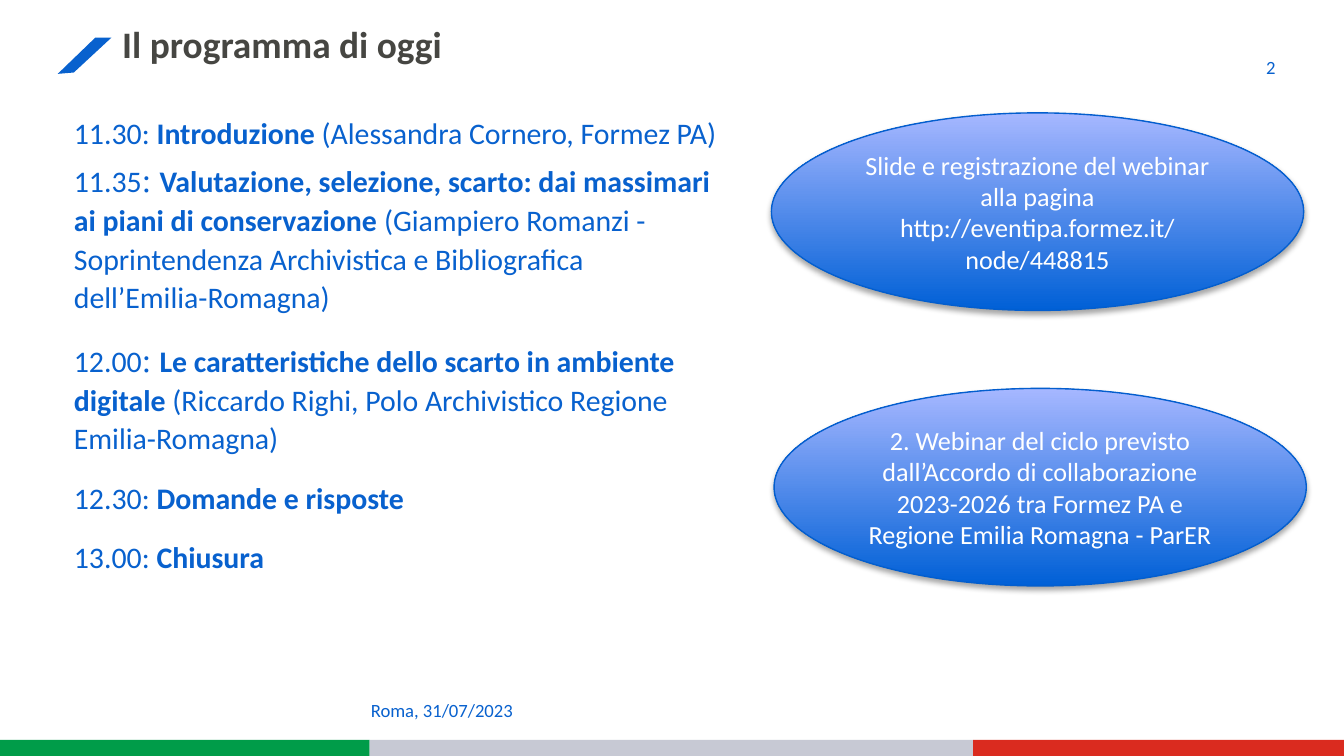
from lxml.etree import SubElement as Sub
from pptx import Presentation
from pptx.dml.color import RGBColor as RGB
from pptx.enum.shapes import MSO_SHAPE as Shape
from pptx.enum.text import MSO_ANCHOR as Anchor, PP_ALIGN as Align
from pptx.oxml.ns import qn
from pptx.util import Inches as In, Pt

# Content: each agenda item is time, separator, subject, speaker
TITLE = "Il programma di oggi"
PLACE = "Roma, 31/07/2023"
PAGE = "2"
AGENDA = [
    ("11.30", ": ", "Introduzione", " (Alessandra Cornero, Formez PA)"),
    ("11.35", ": ",
     "Valutazione, selezione, scarto: dai massimari ai piani di conservazione ",
     "(Giampiero Romanzi - Soprintendenza Archivistica e Bibliografica "
     "dell’Emilia-Romagna)"),
    ("12.00", ": ", "Le caratteristiche dello scarto in ambiente digitale ",
     "(Riccardo Righi, Polo Archivistico Regione Emilia-Romagna)"),
    ("12.30", ": ", "Domande e risposte", ""),
    ("13.00", ": ", "Chiusura", ""),
]
SERIF = {"11.35", "12.00"}  # times followed by a large serif colon
NOTES = [
    (5.74, 0.84, ["Slide e registrazione del webinar alla pagina",
                  "http://eventipa.formez.it/node/448815"]),
    (5.76, 2.89, ["2. Webinar del ciclo previsto dall’Accordo di collaborazione "
                  "2023-2026 tra Formez PA e Regione Emilia Romagna - ParER"]),
]

# Theme
THEME = {
    "blue": "0861CE", "dark": "464642", "white": "FFFFFF", "edge": "035ECE",
    "deep": "0060D6", "pale": "A6B7FF", "shade": "000000",
    "font": "Calibri", "serif": "Times New Roman",
    "title": 20, "body": 16, "colon": 18, "note": 14, "small": 10,
}
FLAG = [("009C49", 2.75), ("C7C9D4", 4.49), ("DA2B1F", 2.76)]
W = 10
H = W * 9 / 16
BAR = 0.12
NOTE_W, NOTE_H = 3.96, 1.47
SLASH = [(0.71, 0.28), (0.83, 0.28), (0.55, 0.54), (0.43, 0.55)]


def tint(name):
    return RGB.from_string(THEME.get(name, name))


def paint(shape, color):
    shape.shadow.inherit = False
    shape.fill.solid()
    shape.fill.fore_color.rgb = tint(color)
    shape.line.fill.background()


def write(par, text, size, color="blue", font="font", bold=False):
    run = par.add_run()
    run.text = text
    look = {"name": THEME[font], "size": Pt(THEME[size]), "bold": bold}
    for key, value in look.items():
        setattr(run.font, key, value)
    run.font.color.rgb = tint(color)


def add_box(slide, area, anchor=Anchor.TOP):
    frame = slide.shapes.add_textbox(*map(In, area)).text_frame
    look = {"word_wrap": True, "vertical_anchor": anchor, "margin_left": 0,
            "margin_right": 0, "margin_top": 0, "margin_bottom": 0}
    for key, value in look.items():
        setattr(frame, key, value)
    return frame


def cast(shape):
    """Give a shape a soft shadow straight below it."""
    shape.shadow.inherit = False
    effects = shape._element.spPr.find(qn("a:effectLst"))
    outer = Sub(effects, qn("a:outerShdw"), blurRad=str(Pt(3.1)),
                dist=str(Pt(1.8)), dir="5400000", rotWithShape="0")
    color = Sub(outer, qn("a:srgbClr"), val=THEME["shade"])
    Sub(color, qn("a:alpha"), val="35000")


def add_note(slide, left, top, lines):
    oval = slide.shapes.add_shape(
        Shape.OVAL, *map(In, (left, top, NOTE_W, NOTE_H)))
    oval.fill.gradient()
    oval.fill.gradient_angle = 90
    for stop, color in zip(oval.fill.gradient_stops, ("deep", "pale")):
        stop.color.rgb = tint(color)
    oval.line.color.rgb = tint("edge")
    oval.line.width = Pt(0.75)
    cast(oval)
    frame = oval.text_frame
    frame.word_wrap = True
    frame.vertical_anchor = Anchor.MIDDLE
    for i, line in enumerate(lines):
        par = frame.add_paragraph() if i else frame.paragraphs[0]
        par.alignment = Align.CENTER
        write(par, line, "note", "white")


def add_agenda(slide):
    frame = add_box(slide, (0.55, 0.85, 4.81, 3.94))
    for i, (time, sep, subject, speaker) in enumerate(AGENDA):
        par = frame.paragraphs[0]
        if i:
            par = frame.add_paragraph()
            look = {"line_spacing": 1.07, "space_before": Pt(3.4),
                    "space_after": Pt(8)}
            for key, value in look.items():
                setattr(par, key, value)
        if time in SERIF:
            write(par, time, "body")
            write(par, sep, "colon", font="serif")
        else:
            write(par, time + sep, "body")
        write(par, subject, "body", bold=True)
        if speaker:
            write(par, speaker, "body")


def main():
    deck = Presentation()
    deck.slide_width, deck.slide_height = In(W), In(H)
    slide = deck.slides.add_slide(deck.slide_layouts[6])

    # Flag along the bottom edge
    left = 0
    for color, width in FLAG:
        band = slide.shapes.add_shape(
            Shape.RECTANGLE, *map(In, (left, H - BAR, width, BAR)))
        paint(band, color)
        left += width

    # Title with its slanted mark
    start, *rest = [(In(x), In(y)) for x, y in SLASH]
    pen = slide.shapes.build_freeform(*start)
    pen.add_line_segments(rest, close=True)
    paint(pen.convert_to_shape(), "blue")
    head = add_box(slide, (0.91, 0.16, 8.27, 0.69))
    write(head.paragraphs[0], TITLE, "title", "dark", bold=True)

    # Place, date and page number
    foot = add_box(slide, (2.76, 5.17, 2.33, 0.2), Anchor.BOTTOM)
    write(foot.paragraphs[0], PLACE, "small")
    page = add_box(slide, (8.94, 0.28, 0.55, 0.3), Anchor.BOTTOM)
    page.paragraphs[0].alignment = Align.RIGHT
    write(page.paragraphs[0], PAGE, "small")

    # Agenda and side notes
    add_agenda(slide)
    for note in NOTES:
        add_note(slide, *note)

    deck.save("out.pptx")


if __name__ == "__main__":
    main()
